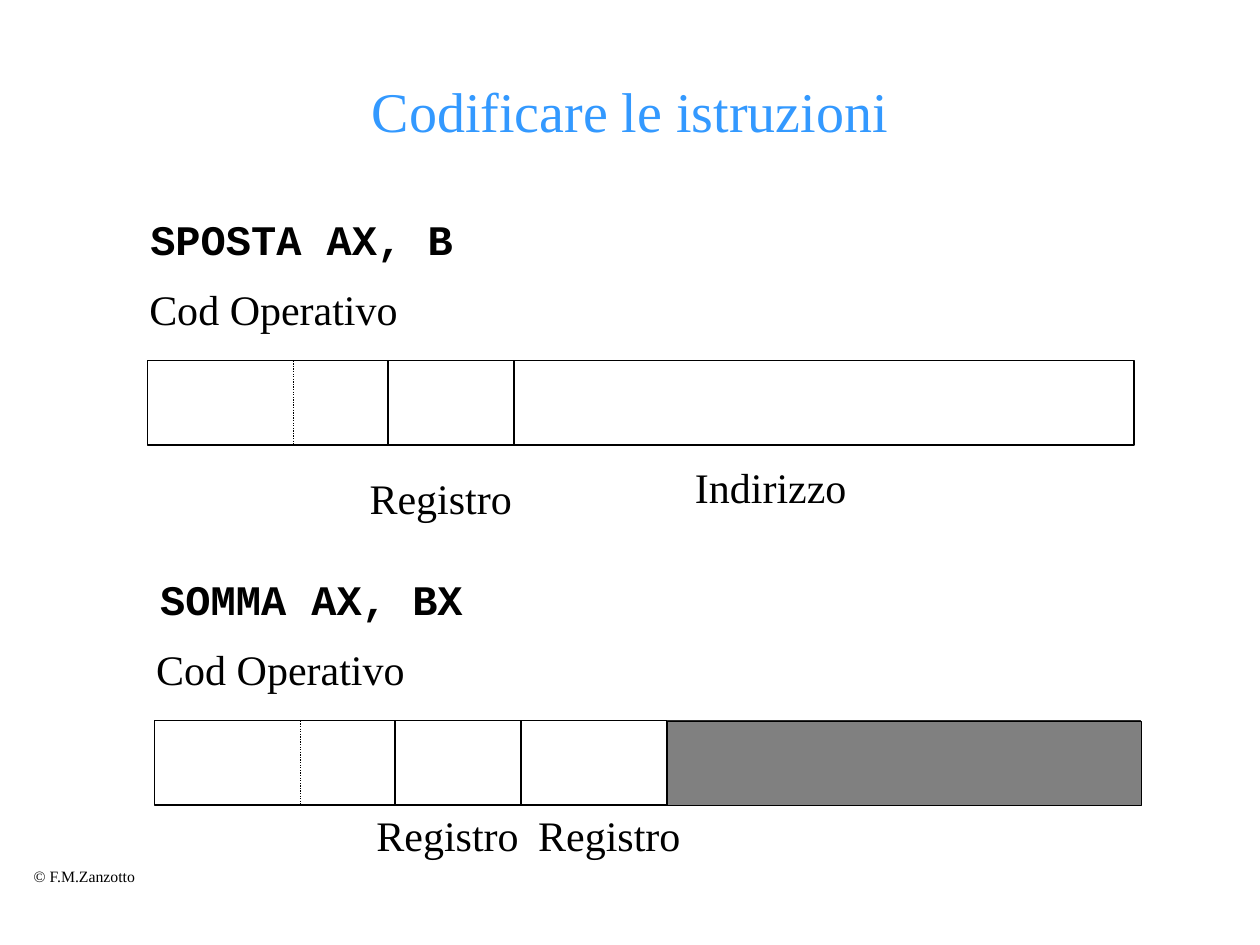
from dataclasses import dataclass

from lxml import etree
from pptx import Presentation
from pptx.dml.color import RGBColor
from pptx.enum.dml import MSO_LINE
from pptx.enum.shapes import MSO_CONNECTOR, MSO_SHAPE
from pptx.enum.text import MSO_ANCHOR, PP_ALIGN
from pptx.oxml.ns import qn
from pptx.util import Cm, Pt

RECTANGLE = MSO_SHAPE.RECTANGLE
STRAIGHT = MSO_CONNECTOR.STRAIGHT
DOTTED = MSO_LINE.ROUND_DOT
LEFT, CENTER = PP_ALIGN.LEFT, PP_ALIGN.CENTER
TOP, MIDDLE = MSO_ANCHOR.TOP, MSO_ANCHOR.MIDDLE


@dataclass(frozen=True)
class Theme:
    ink: RGBColor = RGBColor(0x00, 0x00, 0x00)
    paper: RGBColor = RGBColor(0xFF, 0xFF, 0xFF)
    unused: RGBColor = RGBColor(0x80, 0x80, 0x80)
    heading: RGBColor = RGBColor(0x33, 0x99, 0xFF)
    serif: str = "Times New Roman"
    mono: str = "Courier New"
    heading_size: int = 32
    body_size: int = 24
    credit_size: int = 9
    thin: float = 0.75
    thick: float = 1.5
    hairline: float = 0.25


THEME = Theme()
WORD_WIDTH, WORD_HEIGHT = 19.89, 1.7
OPCODE_SPLIT, OPCODE_END, REGISTER_END, SECOND_REGISTER_END = 2.95, 4.85, 7.39, 10.34
LABEL_HEIGHT = 1.27


def add_text(slide, text, box, size=THEME.body_size, font=THEME.serif,
             color=THEME.ink, bold=False, align=LEFT, anchor=TOP, wrap=False):
    label = slide.shapes.add_textbox(*(Cm(length) for length in box))
    frame = label.text_frame
    frame.word_wrap = wrap
    frame.vertical_anchor = anchor
    paragraph = frame.paragraphs[0]
    paragraph.alignment = align
    run = paragraph.add_run()
    run.text = text
    run.font.name = font
    run.font.size = Pt(size)
    run.font.bold = bold
    run.font.color.rgb = color


def add_field(slide, box, fill, weight):
    field = slide.shapes.add_shape(RECTANGLE, *(Cm(length) for length in box))
    field.shadow.inherit = False
    field.fill.solid()
    field.fill.fore_color.rgb = fill
    field.line.color.rgb = THEME.ink
    field.line.width = Pt(weight)


def add_divider(slide, x, top, weight=THEME.thick, dash=None):
    divider = slide.shapes.add_connector(
        STRAIGHT, Cm(x), Cm(top), Cm(x), Cm(top + WORD_HEIGHT))
    divider.line.color.rgb = THEME.ink
    divider.line.width = Pt(weight)
    if dash is not None:
        divider.line.dash_style = dash
    etree.SubElement(divider._element.spPr, qn("a:effectLst"))


def add_instruction(slide, left, top, command, command_offset, operands,
                    unused_from=None):
    add_field(slide, (left, top, WORD_WIDTH, WORD_HEIGHT), THEME.paper, THEME.thin)
    add_divider(slide, left + OPCODE_SPLIT, top, THEME.thin, DOTTED)
    for end in (OPCODE_END, REGISTER_END):
        add_divider(slide, left + end, top)

    add_text(slide, command,
             (left + command_offset, top - 3.1, 6.65, LABEL_HEIGHT),
             font=THEME.mono, bold=True)
    add_text(slide, "Cod Operativo",
             (left - 0.21, top - 1.68, 5.51, LABEL_HEIGHT))
    for operand, dx, dy, width in operands:
        add_text(slide, operand, (left + dx, top + dy, width, LABEL_HEIGHT))

    if unused_from is not None:
        add_divider(slide, left + unused_from, top)
        add_field(slide,
                  (left + unused_from, top, WORD_WIDTH - unused_from, WORD_HEIGHT),
                  THEME.unused, THEME.hairline)


def add_title(slide, left, top, width, height):
    add_text(slide, "Codificare le istruzioni", (left, top, width, height),
             size=THEME.heading_size, color=THEME.heading,
             align=CENTER, anchor=MIDDLE, wrap=True)


def add_credit(slide, left, top, width, height):
    add_text(slide, "© F.M.Zanzotto", (left, top, width, height),
             size=THEME.credit_size)


def main():
    deck = Presentation()
    deck.slide_width, deck.slide_height = Cm(25.4), Cm(19.05)
    slide = deck.slides.add_slide(deck.slide_layouts[6])

    add_credit(slide, 0.43, 17.35, 2.59, 0.64)
    add_title(slide, 1.91, 1.27, 21.59, 1.91)
    add_instruction(slide, 2.97, 7.27, "SPOSTA AX, B", -0.19,
                    [("Registro", 4.23, 2.13, 3.4),
                     ("Indirizzo", 10.79, 1.9, 3.7)])
    add_instruction(slide, 3.11, 14.53, "SOMMA AX, BX", -0.13,
                    [("Registro", 4.23, 1.67, 3.4),
                     ("Registro", 7.49, 1.67, 3.4)],
                    unused_from=SECOND_REGISTER_END)

    deck.save("out.pptx")


if __name__ == "__main__":
    main()
